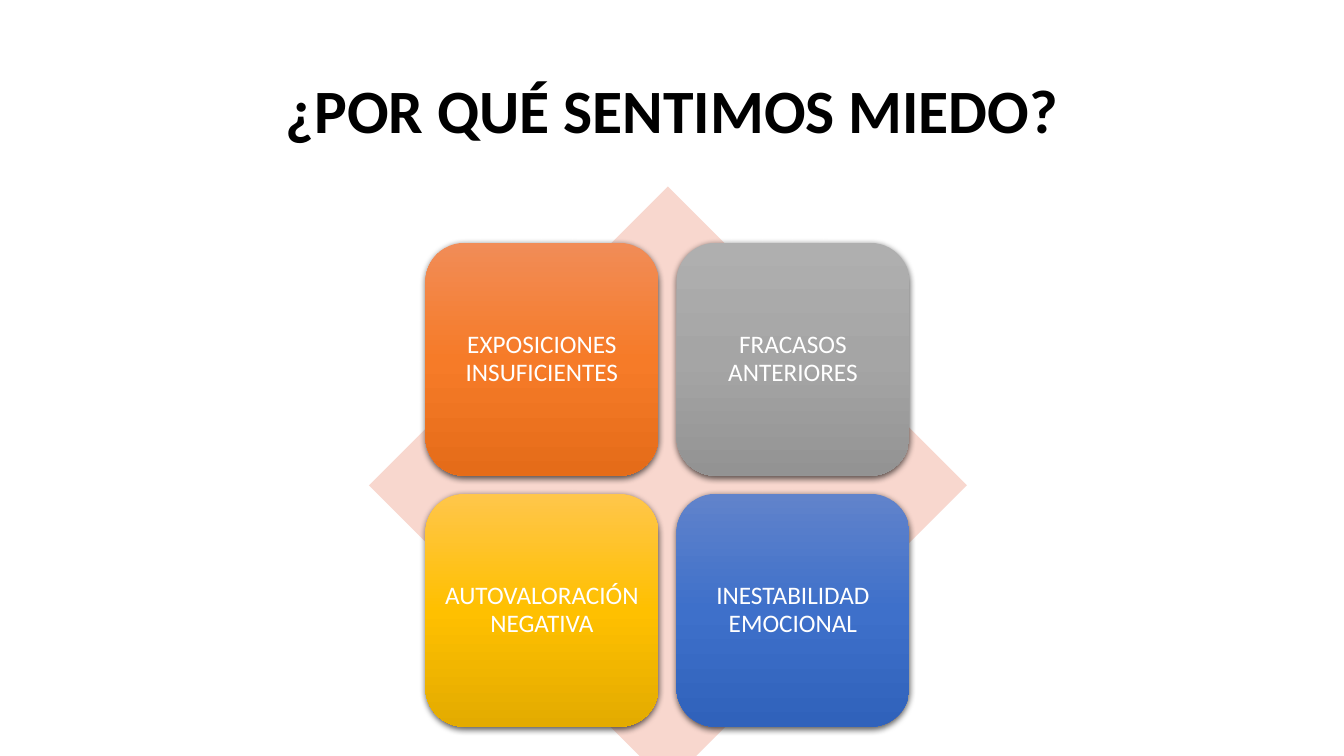
from pptx import Presentation
from pptx.dml.color import RGBColor
from pptx.enum.shapes import MSO_SHAPE
from pptx.enum.text import MSO_ANCHOR, MSO_AUTO_SIZE, PP_ALIGN
from pptx.oxml import parse_xml
from pptx.oxml.ns import nsdecls
from pptx.util import Inches, Pt

DIAMOND = MSO_SHAPE.DIAMOND
ROUND = MSO_SHAPE.ROUNDED_RECTANGLE
MIDDLE = MSO_ANCHOR.MIDDLE
CENTER = PP_ALIGN.CENTER
NO_FIT = MSO_AUTO_SIZE.NONE

BLACK = RGBColor(0x00, 0x00, 0x00)
WHITE = RGBColor(0xFF, 0xFF, 0xFF)
PINK = RGBColor(0xF8, 0xD7, 0xCE)
ORANGE = (RGBColor(0xF1, 0x8C, 0x57), RGBColor(0xF6, 0x7B, 0x28), RGBColor(0xE5, 0x6C, 0x19))
GRAY = (RGBColor(0xAF, 0xAF, 0xAF), RGBColor(0xA5, 0xA5, 0xA5), RGBColor(0x93, 0x93, 0x93))
GOLD = (RGBColor(0xFF, 0xC6, 0x4B), RGBColor(0xFF, 0xC0, 0x00), RGBColor(0xE3, 0xAB, 0x00))
BLUE = (RGBColor(0x61, 0x83, 0xCB), RGBColor(0x3E, 0x70, 0xCA), RGBColor(0x30, 0x62, 0xBB))

TITLE = "¿POR QUÉ SENTIMOS MIEDO?"
CAUSES = [
    ("EXPOSICIONES INSUFICIENTES", ORANGE),
    ("FRACASOS ANTERIORES", GRAY),
    ("AUTOVALORACIÓN NEGATIVA", GOLD),
    ("INESTABILIDAD EMOCIONAL", BLUE),
]

LEFT, TOP, SIDE = 3.66, 1.85, 5.93
INSET, TILE, STEP = 0.56, 2.31, 2.49


def write(shape, text, size, color, bold=False, pad=0.07):
    frame = shape.text_frame
    frame.auto_size = NO_FIT
    frame.word_wrap = True
    frame.vertical_anchor = MIDDLE
    frame.margin_left = frame.margin_right = Inches(pad)
    frame.margin_top = frame.margin_bottom = Inches(pad)
    line = frame.paragraphs[0]
    line.alignment = CENTER
    line.line_spacing = 0.9
    run = line.add_run()
    run.text = text
    run.font.name = "Calibri"
    run.font.size = Pt(size)
    run.font.bold = bold
    run.font.color.rgb = color


def shade(shape, colors):
    stops = "".join(
        f'<a:gs pos="{50000 * i}"><a:srgbClr val="{color}"/></a:gs>'
        for i, color in enumerate(colors)
    )
    props = shape.element.spPr
    props.insert(2, parse_xml(
        f'<a:gradFill {nsdecls("a")}><a:gsLst>{stops}</a:gsLst>'
        '<a:lin ang="5400000" scaled="0"/></a:gradFill>'
    ))
    props.append(parse_xml(
        f'<a:effectLst {nsdecls("a")}>'
        f'<a:outerShdw blurRad="{Pt(4.5)}" dist="{Pt(1.5)}" dir="5400000" '
        'algn="ctr" rotWithShape="0"><a:srgbClr val="000000">'
        '<a:alpha val="63000"/></a:srgbClr></a:outerShdw></a:effectLst>'
    ))


def main():
    deck = Presentation()
    deck.slide_width, deck.slide_height = Inches(13.33), Inches(7.5)
    slide = deck.slides.add_slide(deck.slide_layouts[5])

    title = slide.shapes.title
    title.left, title.top = Inches(0.92), Inches(0.4)
    title.width, title.height = Inches(11.5), Inches(1.45)
    write(title, TITLE, 44, BLACK, bold=True, pad=0.1)

    back = slide.shapes.add_shape(
        DIAMOND, Inches(LEFT), Inches(TOP), Inches(SIDE), Inches(SIDE))
    back.shadow.inherit = False
    back.fill.solid()
    back.fill.fore_color.rgb = PINK
    back.line.fill.background()

    for i, (text, colors) in enumerate(CAUSES):
        row, col = divmod(i, 2)
        tile = slide.shapes.add_shape(
            ROUND,
            Inches(LEFT + INSET + col * STEP), Inches(TOP + INSET + row * STEP),
            Inches(TILE), Inches(TILE))
        tile.line.fill.background()
        shade(tile, colors)
        write(tile, text, 18, WHITE)

    deck.save("out.pptx")


if __name__ == "__main__":
    main()
